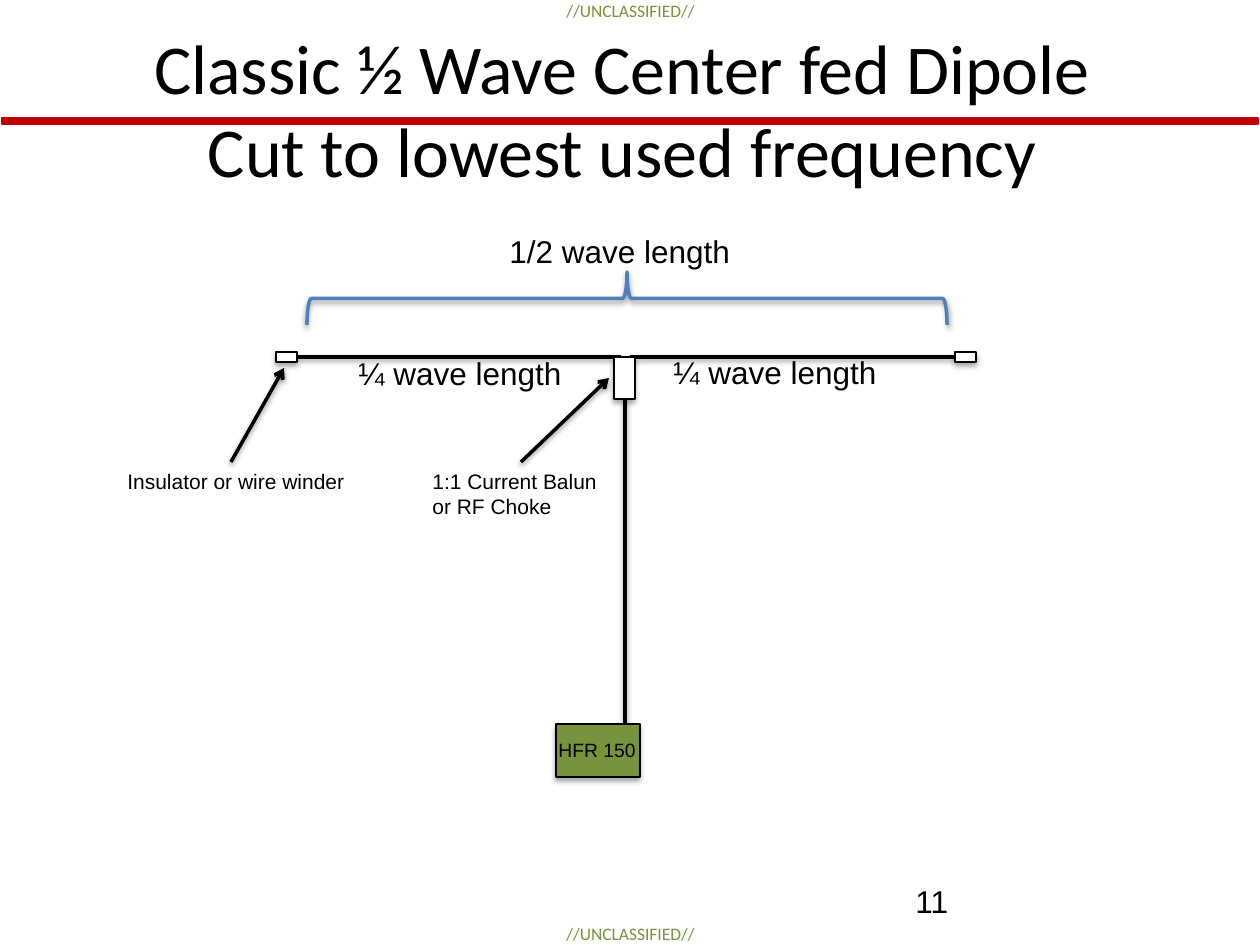
from dataclasses import dataclass

from lxml import etree
from pptx import Presentation
from pptx import util as u
from pptx.dml.color import RGBColor
from pptx.enum import shapes, text
from pptx.oxml import ns

PX_PER_INCH = 126


@dataclass(frozen=True)
class Theme:
    black: str = "000000"
    white: str = "FFFFFF"
    red: str = "C00000"
    green: str = "77933C"
    blue: str = "4F81BD"
    heading_font: str = "Calibri"
    body_font: str = "Arial"
    title: int = 40
    body: int = 18
    note: int = 12
    device: int = 11
    marking: int = 10
    wire: float = 2
    outline: float = 0.75


def px(n):
    return u.Emu(round(n * u.Inches(1) / PX_PER_INCH))


def child(parent, tag, **attrs):
    return etree.SubElement(parent, ns.qn(tag), {k: str(v) for k, v in attrs.items()})


class Diagram:
    def __init__(self, slide, theme):
        self.s = slide
        self.theme = theme

    def shadow(self, sp, distance, alpha):
        """Give sp a soft shadow falling straight down; alpha is in percent.

        Call it after fill and line are set, since effects must follow them.
        """
        effects = child(sp.element.spPr, "a:effectLst")
        outer = child(effects, "a:outerShdw", blurRad=u.Pt(3.1), dist=u.Pt(distance),
                      dir=90 * 60000, rotWithShape=0)
        color = child(outer, "a:srgbClr", val=self.theme.black)
        child(color, "a:alpha", val=alpha * 1000)

    def stroke(self, line, color, width):
        line.color.rgb = RGBColor.from_string(color)
        line.width = u.Pt(width)

    def fill_text(self, tf, lines, size, font, color, align=text.PP_ALIGN.LEFT):
        tf.text = lines
        style = {"size": u.Pt(size), "name": font}
        for p in tf.paragraphs:
            p.alignment = align
            for r in p.runs:
                for key, value in style.items():
                    setattr(r.font, key, value)
                r.font.color.rgb = RGBColor.from_string(color)

    def title(self, lines, x, y, w, h):
        sp = self.s.shapes.title
        place = {"left": x, "top": y, "width": w, "height": h}
        for key, value in place.items():
            setattr(sp, key, px(value))
        tf = sp.text_frame
        tf.auto_size = text.MSO_AUTO_SIZE.NONE
        tf.vertical_anchor = text.MSO_ANCHOR.MIDDLE
        self.fill_text(tf, lines, self.theme.title, self.theme.heading_font,
                       self.theme.black, text.PP_ALIGN.CENTER)
        sp.element.getparent().append(sp.element)  # in front of the red rule

    def label(self, lines, x, y, w, h, size, **style):
        sp = self.s.shapes.add_textbox(px(x), px(y), px(w), px(h))
        tf = sp.text_frame
        tf.word_wrap = False
        look = {"font": self.theme.body_font, "color": self.theme.black} | style
        self.fill_text(tf, lines, size, **look)

    def marking(self, y):
        self.label("//UNCLASSIFIED//", 541, y, 179, 34, self.theme.marking,
                   font=self.theme.heading_font, color=self.theme.green,
                   align=text.PP_ALIGN.CENTER)

    def rectangle(self, x, y, w, h, fill, outline, width):
        sp = self.s.shapes.add_shape(shapes.MSO_SHAPE.RECTANGLE, px(x), px(y), px(w), px(h))
        sp.fill.solid()
        sp.fill.fore_color.rgb = RGBColor.from_string(fill)
        self.stroke(sp.line, outline, width)
        return sp

    def rule(self, x, y, w, h):
        sp = self.rectangle(x, y, w, h, self.theme.red, self.theme.red, 1.5)
        sp.shadow.inherit = False

    def box(self, x, y, w, h, fill):
        sp = self.rectangle(x, y, w, h, fill, self.theme.black, self.theme.outline)
        self.shadow(sp, 1.8, 35)

    def brace(self, x, y, w, h):
        """Draw a brace that opens downward and fills the given area."""
        left, top = x + (w - h) / 2, y + (h - w) / 2
        sp = self.s.shapes.add_shape(shapes.MSO_SHAPE.LEFT_BRACE,
                                     px(left), px(top), px(h), px(w))
        sp.rotation = 90
        sp.fill.background()
        self.stroke(sp.line, self.theme.blue, self.theme.wire)
        self.shadow(sp, 1.6, 38)

    def wire(self, x1, y1, x2, y2, arrow=False):
        c = self.s.shapes.add_connector(shapes.MSO_CONNECTOR.STRAIGHT,
                                        px(x1), px(y1), px(x2), px(y2))
        self.stroke(c.line, self.theme.black, self.theme.wire)
        if arrow:
            child(c.element.spPr.find(ns.qn("a:ln")), "a:tailEnd", type="arrow")
        self.shadow(c, 1.6, 38)


def main():
    prs = Presentation()
    prs.slide_width, prs.slide_height = u.Inches(10), u.Inches(7.5)
    s = prs.slides.add_slide(prs.slide_layouts[5])
    theme = Theme()
    d = Diagram(s, theme)

    d.rule(2, 118, 1256, 6)
    for y in (-6, 917):
        d.marking(y)
    d.title("Classic ½ Wave Center fed Dipole \vCut to lowest used frequency ",
            63, 21, 1134, 174)
    d.label("11", 903, 876, 294, 50, theme.body)

    # Antenna, balun, feed line and end insulators
    wire_y, feed_x = 357, 625
    for x1, x2 in ((296, 621), (630, 955)):
        d.wire(x1, wire_y, x2, wire_y)
    d.box(614, wire_y, 21, 42, theme.white)
    d.wire(feed_x, 399, feed_x, 724)
    for x in (955, 276):
        d.box(x, 352, 21, 10, theme.white)

    # Lengths
    for x, y in ((346, 348), (661, 347)):
        d.label("¼ wave length", x, y, 231, 50, theme.body)
    d.brace(307, 272, 640, 53)
    d.label("1/2 wave length", 497, 226, 248, 50, theme.body)

    # Radio
    d.box(556, 724, 84, 53, theme.green)
    d.label("HFR 150", 546, 732, 105, 37, theme.device)

    # Callouts
    d.label("1:1 Current Balun\nor RF Choke", 420, 462, 192, 63, theme.note)
    d.wire(521, 462, 609, 378, arrow=True)
    d.label("Insulator or wire winder", 115, 462, 244, 38, theme.note)
    d.wire(231, 462, 284, 368, arrow=True)

    prs.save("out.pptx")


if __name__ == "__main__":
    main()
